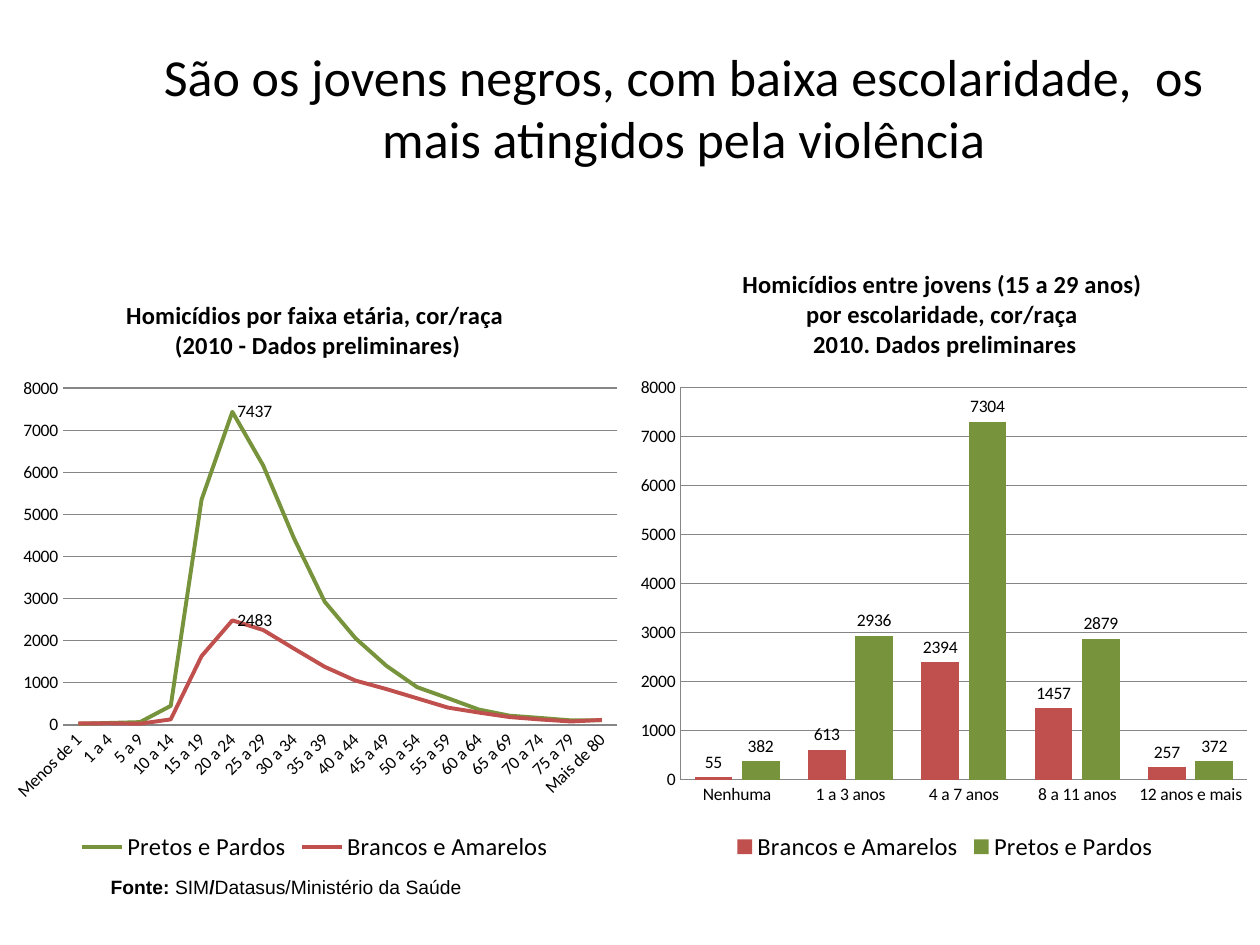
import pptx
import pptx.chart.data
import pptx.dml.color
import pptx.enum.chart
import pptx.enum.text
import pptx.oxml
import pptx.oxml.ns
import pptx.util

Inches, Pt = pptx.util.Inches, pptx.util.Pt
RGBColor = pptx.dml.color.RGBColor
XL = pptx.enum.chart
qn = pptx.oxml.ns.qn

BLACK = RGBColor(0x00, 0x00, 0x00)
GREEN = RGBColor(0x77, 0x93, 0x3C)
RED = RGBColor(0xC0, 0x50, 0x4D)
GRAY = RGBColor(0x86, 0x86, 0x86)

BLACK_GROUP, WHITE_GROUP = "Pretos e Pardos", "Brancos e Amarelos"
GROUP_COLORS = {BLACK_GROUP: GREEN, WHITE_GROUP: RED}

AGES = ["Menos de 1", "1 a 4"] + [f"{a} a {a + 4}" for a in range(5, 80, 5)] + ["Mais de 80"]
AGE_SERIES = {
    BLACK_GROUP: [27, 47, 67, 453, 5351, 7437, 6165, 4435, 2925, 2059, 1406,
                  897, 636, 366, 220, 166, 108, 113],
    WHITE_GROUP: [36, 40, 29, 131, 1634, 2483, 2254, 1813, 1380, 1053, 853,
                  632, 412, 294, 187, 129, 82, 118],
}
SCHOOLING = ["Nenhuma", "1 a 3 anos", "4 a 7 anos", "8 a 11 anos", "12 anos e mais"]
SCHOOLING_SERIES = {
    WHITE_GROUP: [55, 613, 2394, 1457, 257],
    BLACK_GROUP: [382, 2936, 7304, 2879, 372],
}


def set_font(font, size, name="Calibri", bold=False):
    font.color.rgb = BLACK
    for key, value in {"size": Pt(size), "name": name, "bold": bold}.items():
        setattr(font, key, value)


def add_text(slide, box, runs, size, name, align, margin_top=0.05):
    """Write one paragraph from (text, bold) pairs."""
    tf = slide.shapes.add_textbox(*map(Inches, box)).text_frame
    tf.word_wrap = True
    tf.margin_top = Inches(margin_top)
    p = tf.paragraphs[0]
    p.alignment = align
    for text, bold in runs:
        r = p.add_run()
        r.text = text
        set_font(r.font, size, name, bold)


def set_plot_area(chart, **fractions):
    """Fix the inner plot area as fractions of the chart box."""
    values = "".join(f'<c:{k} val="{v}"/>' for k, v in fractions.items())
    layout = pptx.oxml.parse_xml(
        f'<c:layout {pptx.oxml.ns.nsdecls("c")}><c:manualLayout>'
        '<c:layoutTarget val="inner"/><c:xMode val="edge"/><c:yMode val="edge"/>'
        f'{values}</c:manualLayout></c:layout>')
    plot_area = chart._chartSpace.chart.plotArea
    for old in plot_area.findall(qn("c:layout")):
        plot_area.remove(old)
    plot_area.insert(0, layout)


def add_chart(slide, box, kind, title, categories, series):
    data = pptx.chart.data.CategoryChartData()
    data.categories = categories
    for name, values in series.items():
        data.add_series(name, values)
    chart = slide.shapes.add_chart(kind, *map(Inches, box), data).chart
    set_font(chart.font, 10)

    chart.has_title = True
    tf = chart.chart_title.text_frame
    tf.text = title
    for p in tf.paragraphs:
        set_font(p.runs[0].font, 14, bold=True)
    chart.chart_title.include_in_layout = False

    chart.has_legend = True
    chart.legend.position = XL.XL_LEGEND_POSITION.BOTTOM
    chart.legend.include_in_layout = False
    set_font(chart.legend.font, 14)

    for axis in (chart.category_axis, chart.value_axis):
        axis.major_tick_mark = axis.minor_tick_mark = XL.XL_TICK_MARK.NONE
        axis.format.line.color.rgb = GRAY
    axis = chart.value_axis
    axis.minimum_scale, axis.maximum_scale, axis.major_unit = 0, 8000, 1000
    axis.has_major_gridlines = True
    axis.major_gridlines.format.line.color.rgb = GRAY
    chart.plots[0].vary_by_categories = False
    return chart


def add_age_chart(slide, box):
    chart = add_chart(slide, box, XL.XL_CHART_TYPE.LINE,
                      "Homicídios por faixa etária, cor/raça\n (2010 - Dados preliminares)",
                      AGES, AGE_SERIES)
    set_plot_area(chart, x=0.1, y=0.19, w=0.88, h=0.57)
    chart.value_axis.format.line.fill.background()
    axis = chart.category_axis
    set_font(axis.tick_labels.font, 10)
    axis._element.find(qn("c:txPr")).find(qn("a:bodyPr")).set("rot", "-2700000")
    peak = AGES.index("20 a 24")
    for s in chart.plots[0].series:
        s.smooth = False
        s.marker.style = XL.XL_MARKER_STYLE.NONE
        s.format.line.color.rgb = GROUP_COLORS[s.name]
        s.format.line.width = Pt(2.25)
        s.data_labels.show_value = False
        s.points[peak].data_label.position = XL.XL_LABEL_POSITION.RIGHT


def add_schooling_chart(slide, box):
    chart = add_chart(slide, box, XL.XL_CHART_TYPE.COLUMN_CLUSTERED,
                      "Homicídios entre jovens (15 a 29 anos) \npor escolaridade, cor/raça \n"
                      "2010. Dados preliminares", SCHOOLING, SCHOOLING_SERIES)
    set_plot_area(chart, x=0.08, y=0.23, w=0.9, h=0.63)
    plot = chart.plots[0]
    plot.gap_width, plot.overlap = 75, -25
    for s in plot.series:
        s.format.fill.solid()
        s.format.fill.fore_color.rgb = GROUP_COLORS[s.name]
        s.data_labels.show_value = True
        s.data_labels.position = XL.XL_LABEL_POSITION.OUTSIDE_END


def main():
    prs = pptx.Presentation()
    prs.slide_width, prs.slide_height = Inches(10), Inches(7.5)
    slide = prs.slides.add_slide(prs.slide_layouts[6])
    align = pptx.enum.text.PP_ALIGN
    add_text(slide, (1.14, 0.28, 8.58, 1.61),
             [("São os jovens negros, com baixa escolaridade,  os mais atingidos pela violência",
               False)], 29.7, "Calibri", align.CENTER, margin_top=0.07)
    add_age_chart(slide, (0, 2.19, 5, 4.69))
    add_schooling_chart(slide, (5, 1.94, 5, 4.94))
    add_text(slide, (0.78, 6.9, 4.25, 0.29),
             [("Fonte: ", True), ("SIM", False), ("/", True),
              ("Datasus/Ministério da Saúde", False)], 11, "Arial", align.LEFT)
    prs.save("out.pptx")


if __name__ == "__main__":
    main()
